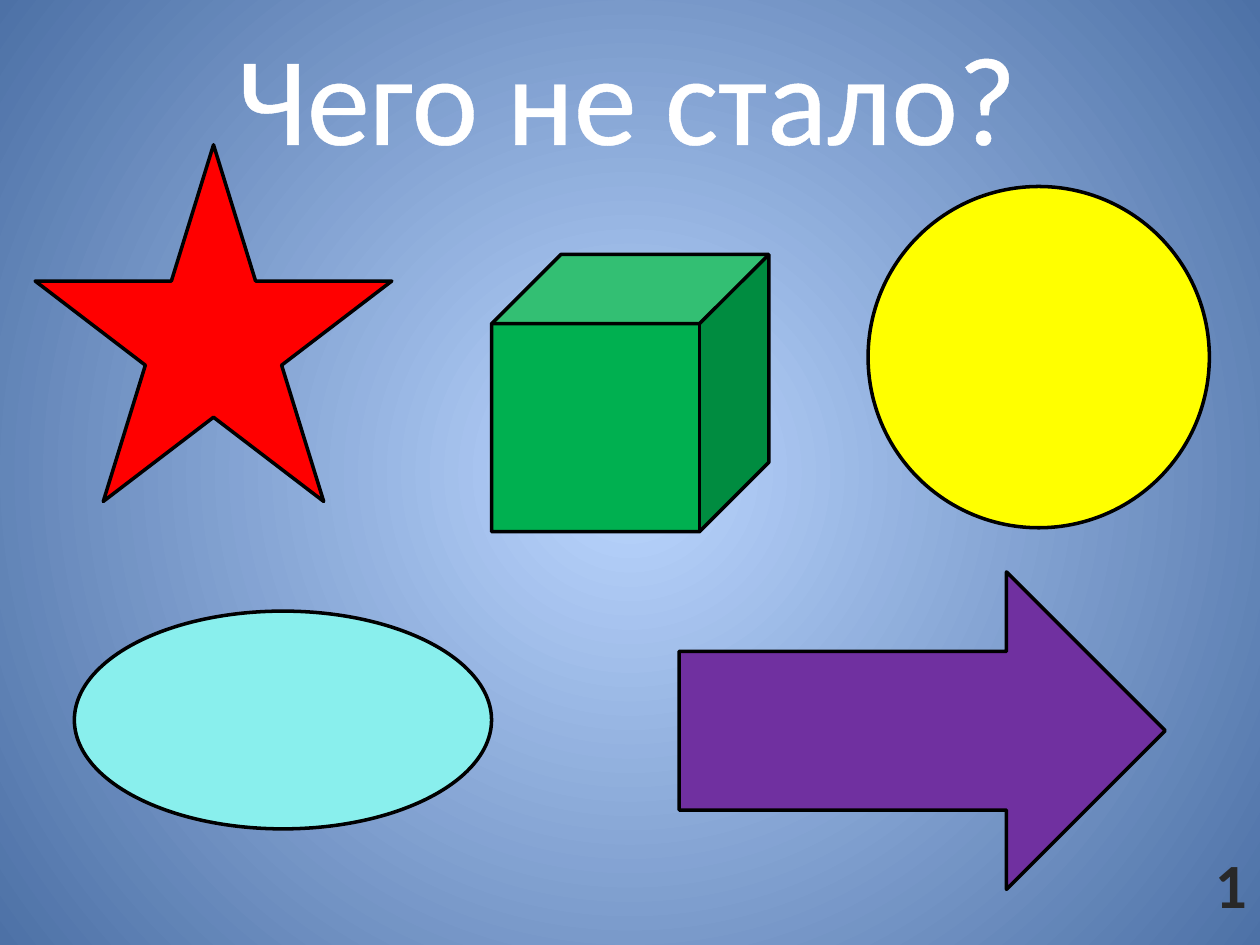
from lxml import etree
from pptx import Presentation
from pptx.dml.color import RGBColor
from pptx.enum import shapes, text
from pptx.oxml import parse_xml
from pptx.oxml.ns import nsdecls, qn
from pptx.util import Cm, Pt

WHITE = RGBColor(0xFF, 0xFF, 0xFF)
BLACK = RGBColor(0x00, 0x00, 0x00)
CHARCOAL = RGBColor(0x28, 0x28, 0x28)
RED = RGBColor(0xFF, 0x00, 0x00)
YELLOW = RGBColor(0xFF, 0xFF, 0x00)
GREEN = RGBColor(0x00, 0xB0, 0x50)
AQUA = RGBColor(0x89, 0xEF, 0xED)
PURPLE = RGBColor(0x70, 0x30, 0xA0)
GLOW_CENTRE = RGBColor(0xBB, 0xD6, 0xFF)
GLOW_EDGE = RGBColor(0x4D, 0x71, 0xA6)

KIND = shapes.MSO_SHAPE
FIGURES = [
    (KIND.STAR_5_POINT, RED, (0.71, 2.92, 7.19, 7.19)),
    (KIND.OVAL, YELLOW, (17.5, 3.76, 6.88, 6.88)),
    (KIND.CUBE, GREEN, (9.91, 5.13, 5.59, 5.59)),
    (KIND.OVAL, AQUA, (1.5, 12.32, 8.41, 4.39)),
    (KIND.RIGHT_ARROW, PURPLE, (13.69, 11.53, 9.8, 6.4)),
]


def paint_background(slide):
    """Fill the background with a glow spreading from the centre."""
    fill = slide.background.fill
    fill.gradient()
    for stop, colour in zip(fill.gradient_stops, (GLOW_CENTRE, GLOW_EDGE)):
        stop.color.rgb = colour
    direction = next(slide.background._cSld.iter(qn("a:lin")))
    radial = parse_xml(
        f'<a:path {nsdecls("a")} path="circle">'
        '<a:fillToRect l="50000" t="50000" r="50000" b="50000"/></a:path>'
    )
    direction.getparent().replace(direction, radial)


def outline_letters(run, width):
    """Give the letters of a run a white outline."""
    line = etree.Element(qn("a:ln"), w=str(Pt(width)))
    fill = etree.SubElement(line, qn("a:solidFill"))
    etree.SubElement(fill, qn("a:srgbClr"), val=str(WHITE))
    run.font._element.insert(0, line)


def write_centred(frame, wording, size, colour, bold, outline):
    """Write one centred, outlined run into a text frame."""
    frame.margin_left = frame.margin_right = Cm(0.13)
    frame.margin_top = frame.margin_bottom = Cm(0.13)
    paragraph = frame.paragraphs[0]
    paragraph.alignment = text.PP_ALIGN.CENTER
    run = paragraph.add_run()
    run.text = wording
    run.font.name = "Calibri"
    run.font.size = Pt(size)
    run.font.bold = bold
    run.font.color.rgb = colour
    outline_letters(run, outline)


def add_title(slide, wording):
    """Place and write the slide title."""
    title = slide.shapes.title
    title.left, title.top = Cm(0.89), Cm(0)
    title.width, title.height = Cm(23.5), Cm(3.81)
    title.text_frame.vertical_anchor = text.MSO_ANCHOR.MIDDLE
    write_centred(title.text_frame, wording, 72, WHITE, False, 1.45)


def add_figure(slide, kind, colour, box):
    """Add a coloured figure with a black contour."""
    figure = slide.shapes.add_shape(kind, *map(Cm, box))
    figure.shadow.inherit = False
    figure.fill.solid()
    figure.fill.fore_color.rgb = colour
    figure.line.color.rgb = BLACK
    figure.line.width = Pt(2)


def add_number(slide, wording):
    """Add the number in the lower right corner."""
    number = slide.shapes.add_textbox(Cm(24.36), Cm(16.92), Cm(0.74), Cm(1.73))
    number.text_frame.word_wrap = False
    number.text_frame.auto_size = text.MSO_AUTO_SIZE.SHAPE_TO_FIT_TEXT
    write_centred(number.text_frame, wording, 36, CHARCOAL, True, 1.4)


def main():
    """Build and save the slide."""
    deck = Presentation()
    deck.slide_width, deck.slide_height = Cm(25.4), Cm(19.05)
    slide = deck.slides.add_slide(deck.slide_layouts[5])
    paint_background(slide)
    add_title(slide, "Чего не стало?")
    for kind, colour, box in FIGURES:
        add_figure(slide, kind, colour, box)
    add_number(slide, "1")
    deck.save("out.pptx")


if __name__ == "__main__":
    main()
